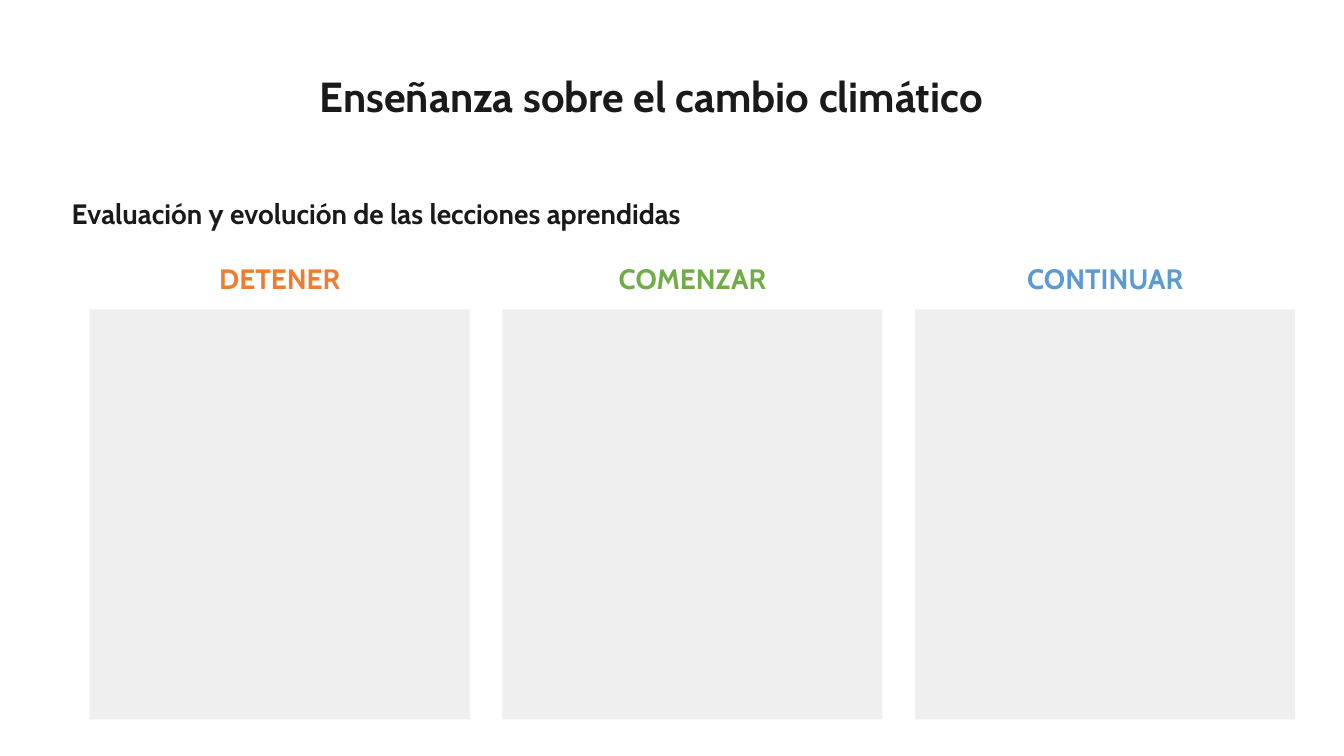
import lxml.etree
import pptx
import pptx.dml.color
import pptx.enum.shapes
import pptx.enum.text
import pptx.oxml.ns
import pptx.util

Pt = pptx.util.Pt
RGBColor = pptx.dml.color.RGBColor
Align = pptx.enum.text.PP_ALIGN
Anchor = pptx.enum.text.MSO_ANCHOR

INK = RGBColor(0x1A, 0x1A, 0x1A)
ORANGE = RGBColor(0xED, 0x7D, 0x31)
GREEN = RGBColor(0x70, 0xAD, 0x47)
BLUE = RGBColor(0x5B, 0x9B, 0xD5)
PANEL_GREY = RGBColor(0xEF, 0xEF, 0xEF)

FONT = "Cabin"
COMPARISON_LAYOUT = 4
COLUMNS = [("DETENER", ORANGE), ("COMENZAR", GREEN), ("CONTINUAR", BLUE)]
COLUMN_LEFT, COLUMN_STEP, COLUMN_WIDTH = 56.9, 294.8, 285.8
HEADING_TOP, HEADING_HEIGHT = 185.8, 35.2
PANEL_INSET, PANEL_HEIGHT = 7.2, 293


def place(box, left, top, width, height):
    box.left, box.top = Pt(left), Pt(top)
    box.width, box.height = Pt(width), Pt(height)


def write_line(box, text, size, color, align, anchor=Anchor.TOP, right_margin=7.2):
    """Fill a placeholder with one bold line that has no bullet."""
    frame = box.text_frame
    frame.word_wrap = True
    frame.auto_size = pptx.enum.text.MSO_AUTO_SIZE.NONE
    frame.vertical_anchor = anchor
    frame.margin_left, frame.margin_right = Pt(7.2), Pt(right_margin)
    frame.margin_top = frame.margin_bottom = Pt(3.6)

    para = frame.paragraphs[0]
    properties = para._p.get_or_add_pPr()
    properties.set("marL", "0")
    properties.set("indent", "0")
    lxml.etree.SubElement(properties, pptx.oxml.ns.qn("a:buNone"))
    para.alignment = align
    para.line_spacing = 0.9
    para.space_before = Pt(0)

    span = para.add_run()
    span.text = text
    span.font.name = FONT
    span.font.size = Pt(size)
    span.font.bold = True
    span.font.color.rgb = color


def add_panel(page, left, top, width, height):
    panel = page.shapes.add_shape(
        pptx.enum.shapes.MSO_SHAPE.RECTANGLE,
        Pt(left), Pt(top), Pt(width), Pt(height))
    panel.shadow.inherit = False
    panel.fill.solid()
    panel.fill.fore_color.rgb = PANEL_GREY
    panel.line.fill.background()


def add_column(page, heading, index, text, color):
    left = COLUMN_LEFT + index * COLUMN_STEP
    place(heading, left, HEADING_TOP, COLUMN_WIDTH, HEADING_HEIGHT)
    write_line(heading, text, 20, color, Align.CENTER)
    add_panel(page, left + PANEL_INSET, HEADING_TOP + HEADING_HEIGHT,
              COLUMN_WIDTH - 2 * PANEL_INSET, PANEL_HEIGHT)


def main():
    deck = pptx.Presentation()
    deck.slide_width, deck.slide_height = Pt(960), Pt(540)
    page = deck.slides.add_slide(deck.slide_layouts[COMPARISON_LAYOUT])
    title, subtitle, *headings = page.placeholders

    place(title, 159.8, 32.4, 632.2, 77)
    write_line(title, "Enseñanza sobre el cambio climático", 30, INK,
               Align.CENTER, Anchor.MIDDLE, right_margin=28.4)
    place(subtitle, 43.9, 139.7, 602.6, 46.1)
    write_line(subtitle, "Evaluación y evolución de las lecciones aprendidas",
               20, INK, Align.LEFT)

    for index, (heading, (text, color)) in enumerate(zip(headings, COLUMNS)):
        add_column(page, heading, index, text, color)

    deck.save("out.pptx")


if __name__ == "__main__":
    main()
